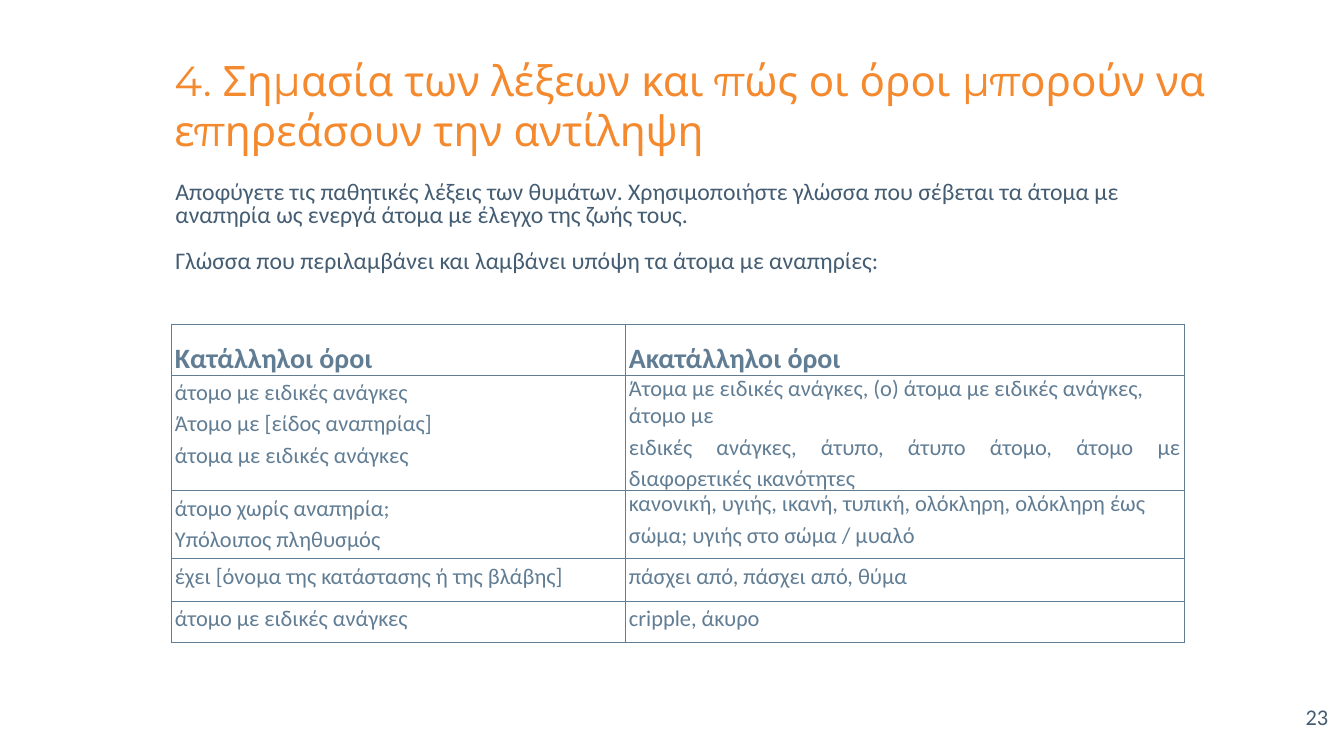
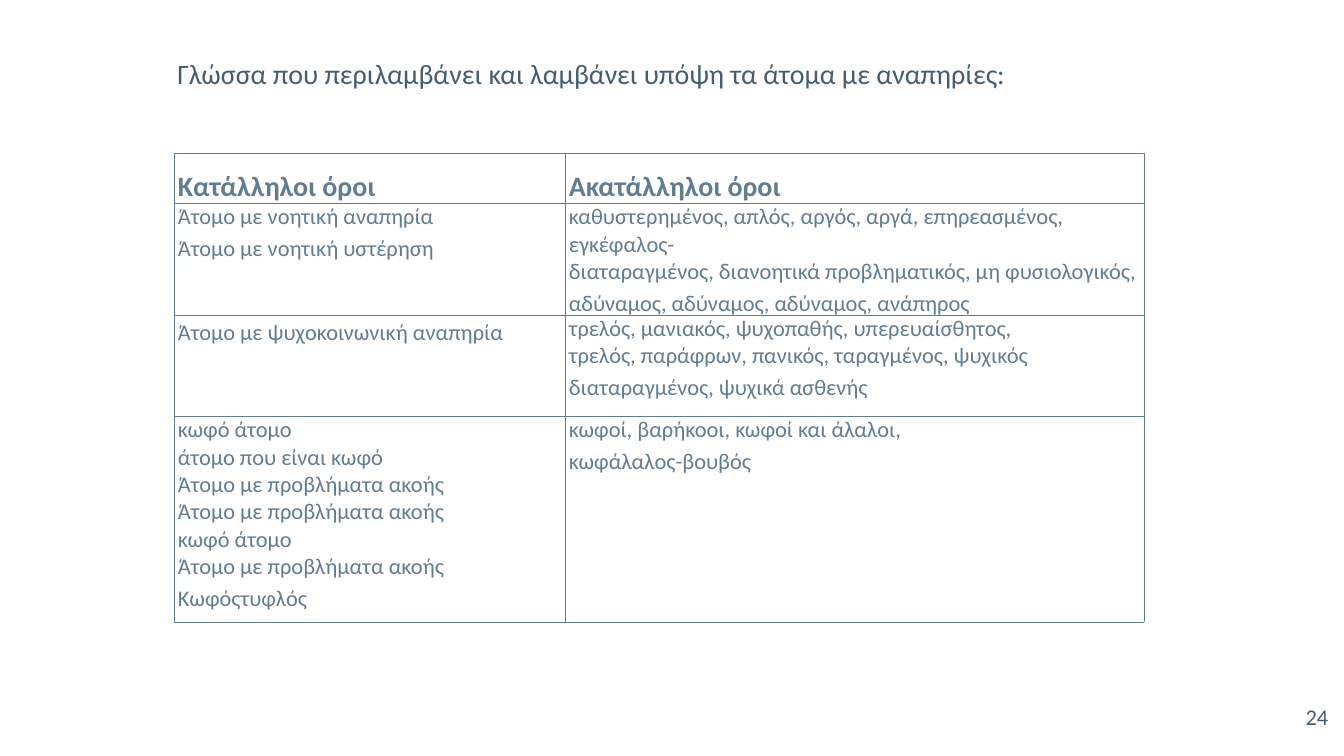
from lxml.etree import SubElement
from pptx import Presentation
from pptx.dml.color import RGBColor
from pptx.enum.text import MSO_ANCHOR as Anchor, PP_ALIGN as Align
from pptx.oxml.ns import qn
from pptx.util import Inches, Pt

ORANGE = "F4892E"
NAVY = "445D73"
STEEL = "617D94"
BODY_FONT = "Calibri"
TITLE_FONT = "Montserrat"
HEADINGS = ("Κατάλληλοι όροι", "Ακατάλληλοι όροι")
INCLUSIVE_LANGUAGE = "Γλώσσα που περιλαμβάνει και λαμβάνει υπόψη τα άτομα με αναπηρίες:"

# Each cell is a list of entries; the lines of an entry before its last are set tight and left
GENERAL_TERMS = [
    (["άτομο με ειδικές ανάγκες", "Άτομο με [είδος αναπηρίας]", "άτομα με ειδικές ανάγκες"],
     ["Άτομα με ειδικές ανάγκες, (ο) άτομα με ειδικές ανάγκες, άτομο με\n"
      "ειδικές ανάγκες, άτυπο, άτυπο άτομο, άτομο με διαφορετικές ικανότητες"]),
    (["άτομο χωρίς αναπηρία;", "Υπόλοιπος πληθυσμός"],
     ["κανονική, υγιής, ικανή, τυπική, ολόκληρη, ολόκληρη έως\nσώμα; υγιής στο σώμα / μυαλό"]),
    (["έχει [όνομα της κατάστασης ή της βλάβης]"], ["πάσχει από, πάσχει από, θύμα"]),
    (["άτομο με ειδικές ανάγκες"], ["cripple, άκυρο"]),
]
SPECIFIC_TERMS = [
    (["Άτομο με νοητική αναπηρία\nΆτομο με νοητική υστέρηση"],
     ["καθυστερημένος, απλός, αργός, αργά, επηρεασμένος, εγκέφαλος-\n"
      "διαταραγμένος, διανοητικά προβληματικός, μη φυσιολογικός,\n"
      "αδύναμος, αδύναμος, αδύναμος, ανάπηρος"]),
    (["Άτομο με ψυχοκοινωνική αναπηρία"],
     ["τρελός, μανιακός, ψυχοπαθής, υπερευαίσθητος,\n"
      "τρελός, παράφρων, πανικός, ταραγμένος, ψυχικός\n"
      "διαταραγμένος, ψυχικά ασθενής"]),
    (["κωφό άτομο\nάτομο που είναι κωφό\nΆτομο με προβλήματα ακοής\n"
      "Άτομο με προβλήματα ακοής\nκωφό άτομο\nΆτομο με προβλήματα ακοής\nΚωφόςτυφλός"],
     ["κωφοί, βαρήκοοι, κωφοί και άλαλοι,\nκωφάλαλος-βουβός"]),
]


def rgb(value):
    return RGBColor.from_string(value)


def write_paragraph(paragraph, text, size, color, font=BODY_FONT, bold=False,
                    align=Align.LEFT, line_spacing=1.0):
    paragraph.text = text
    paragraph.alignment = align
    paragraph.line_spacing = line_spacing
    paragraph.font.name = font
    paragraph.font.size = Pt(size)
    paragraph.font.bold = bold
    paragraph.font.color.rgb = rgb(color)


def next_paragraph(frame):
    first = frame.paragraphs[0]
    return frame.add_paragraph() if first.runs else first


def add_text(slide, box, texts, size, color, inset=(0.06, 0.06), gap=0, **style):
    frame = slide.shapes.add_textbox(*map(Inches, box)).text_frame
    frame.word_wrap = True
    frame.vertical_anchor = Anchor.TOP
    frame.margin_left = frame.margin_right = Inches(inset[0])
    frame.margin_top = frame.margin_bottom = Inches(inset[1])
    for text in texts:
        write_paragraph(next_paragraph(frame), text, size, color, **style)
    for paragraph in frame.paragraphs[1:]:
        paragraph.space_before = Pt(gap)


def add_borders(cell, color, width):
    properties = cell._tc.get_or_add_tcPr()
    for side in ("lnL", "lnR", "lnT", "lnB"):
        line = SubElement(properties, qn(f"a:{side}"), w=str(Pt(width)))
        fill = SubElement(line, qn("a:solidFill"))
        SubElement(fill, qn("a:srgbClr"), val=color)


def fill_cell(cell, entries, size, bold, line_spacing):
    cell.margin_left = cell.margin_right = Inches(0.07)
    cell.margin_top = cell.margin_bottom = 0
    add_borders(cell, STEEL, 1)
    cell.fill.background()
    for entry in entries:
        *leading_lines, last_line = entry.split("\n")
        for line in leading_lines:
            write_paragraph(next_paragraph(cell.text_frame), line, size, STEEL, bold=bold)
        write_paragraph(next_paragraph(cell.text_frame), last_line, size, STEEL, bold=bold,
                        align=Align.JUSTIFY, line_spacing=line_spacing)


def add_terms_table(slide, left, top, widths, heights, terms):
    box = map(Inches, (left, top, sum(widths), sum(heights)))
    table = slide.shapes.add_table(len(heights), len(widths), *box).table
    table.first_row = table.horz_banding = False
    for column, width in zip(table.columns, widths):
        column.width = Inches(width)
    for row, height in zip(table.rows, heights):
        row.height = Inches(height)

    # Heading row, then the terms
    for cell, heading in zip(table.rows[0].cells, HEADINGS):
        fill_cell(cell, [heading], 40, True, 1.5)
    for row_index, row_entries in enumerate(terms, start=1):
        for cell, entries in zip(table.rows[row_index].cells, row_entries):
            fill_cell(cell, entries, 32, False, 1.15)


def add_page_number(slide, number):
    add_text(slide, (24.96, 13.85, 1.6, 1.15), [str(number)], 32, NAVY,
             inset=(0.2, 0.1), align=Align.RIGHT)


def build_general_terms(slide):
    # Title and introduction
    add_text(slide, (3.4, 1.02, 21.34, 1.67),
             ["4. Σημασία των λέξεων και πώς οι όροι μπορούν να επηρεάσουν την αντίληψη"],
             60, ORANGE, font=TITLE_FONT)
    add_text(slide, (3.42, 3.56, 20.04, 1.99),
             ["Αποφύγετε τις παθητικές λέξεις των θυμάτων. Χρησιμοποιήστε γλώσσα που σέβεται "
              "τα άτομα με αναπηρία ως ενεργά άτομα με έλεγχο της ζωής τους.",
              INCLUSIVE_LANGUAGE], 34, NAVY, line_spacing=0.8, gap=33.5)
    # Terms
    add_terms_table(slide, 3.4, 6.44, (9.01, 11.09), (0.92, 1.95, 1.35, 0.85, 0.81),
                    GENERAL_TERMS)


def build_specific_terms(slide):
    add_terms_table(slide, 3.46, 3.04, (7.76, 11.48), (0.91, 2.08, 2.01, 4.08),
                    SPECIFIC_TERMS)
    add_text(slide, (3.46, 1.07, 21.75, 0.82), [INCLUSIVE_LANGUAGE], 40, NAVY)


def main():
    presentation = Presentation()
    presentation.slide_width = Inches(26.67)
    presentation.slide_height = Inches(15)
    for number, build in enumerate((build_general_terms, build_specific_terms), start=23):
        slide = presentation.slides.add_slide(presentation.slide_layouts[6])
        build(slide)
        add_page_number(slide, number)
    presentation.save("out.pptx")


if __name__ == "__main__":
    main()
